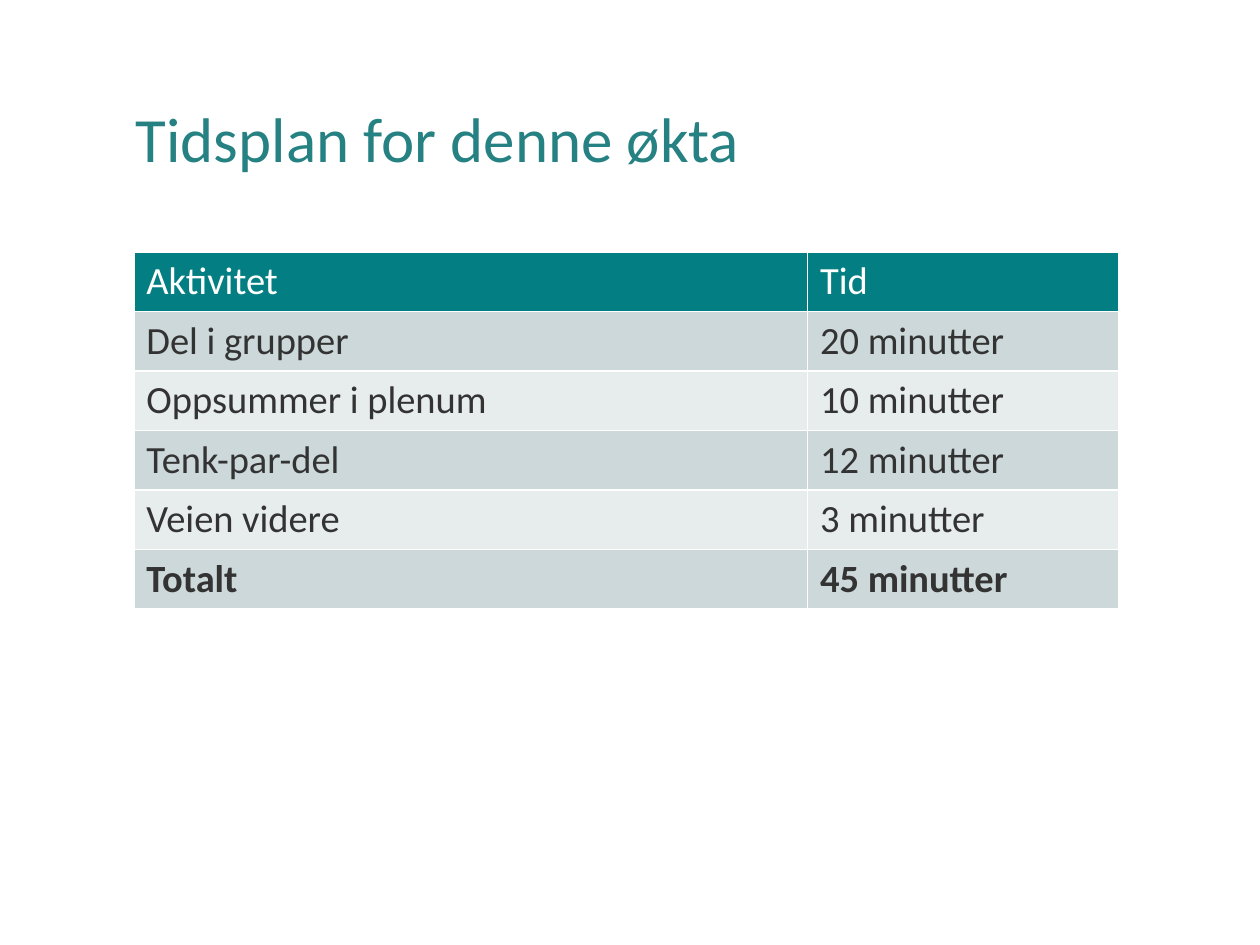
from pptx import Presentation
from pptx.dml.color import RGBColor
from pptx.enum.text import MSO_ANCHOR
from pptx.util import Pt

FONT = "Calibri"
TITLE_TEAL = RGBColor(0x26, 0x81, 0x83)
HEADER_TEAL = RGBColor(0x03, 0x7F, 0x83)
BAND_DARK = RGBColor(0xCC, 0xD8, 0xD9)
BAND_LIGHT = RGBColor(0xE7, 0xEC, 0xED)
TEXT_GREY = RGBColor(0x33, 0x33, 0x33)
WHITE = RGBColor(0xFF, 0xFF, 0xFF)

SCHEDULE = [
    ("Aktivitet", "Tid"),
    ("Del i grupper", "20 minutter"),
    ("Oppsummer i plenum", "10 minutter"),
    ("Tenk-par-del", "12 minutter"),
    ("Veien videre", "3 minutter"),
    ("Totalt", "45 minutter"),
]
COLUMN_WIDTHS = (Pt(385), Pt(178))
ROW_HEIGHT = Pt(34)


def set_font(para, size, color, bold=False):
    font = para.font
    font.name, font.size, font.bold = FONT, Pt(size), bold
    font.color.rgb = color


def add_title(page, text):
    box = page.shapes.add_textbox(Pt(70.5), Pt(29), Pt(597), Pt(104.4))
    frame = box.text_frame
    frame.word_wrap = True
    frame.vertical_anchor = MSO_ANCHOR.MIDDLE
    frame.margin_left = frame.margin_right = Pt(7.2)
    frame.margin_top = frame.margin_bottom = Pt(7.2)
    para = frame.paragraphs[0]
    para.text = text
    para.line_spacing = 0.9
    set_font(para, 36, TITLE_TEAL)


def row_fill(row):
    if row == 0:
        return HEADER_TEAL
    return BAND_DARK if row % 2 else BAND_LIGHT


def add_schedule(page):
    """Add the table; its default style supplies the white cell borders."""
    table = page.shapes.add_table(
        len(SCHEDULE), len(COLUMN_WIDTHS), Pt(76.5), Pt(144),
        sum(COLUMN_WIDTHS), ROW_HEIGHT * len(SCHEDULE)).table
    for column, width in zip(table.columns, COLUMN_WIDTHS):
        column.width = width
    last_row = len(SCHEDULE) - 1
    for row, texts in enumerate(SCHEDULE):
        table.rows[row].height = ROW_HEIGHT
        for column, text in enumerate(texts):
            cell = table.cell(row, column)
            cell.fill.solid()
            cell.fill.fore_color.rgb = row_fill(row)
            cell.text = text
            set_font(cell.text_frame.paragraphs[0], 22,
                     TEXT_GREY if row else WHITE, bold=row == last_row)


def main():
    deck = Presentation()
    deck.slide_width, deck.slide_height = Pt(720), Pt(540)
    page = deck.slides.add_slide(deck.slide_layouts[6])
    add_title(page, "Tidsplan for denne økta")
    add_schedule(page)
    deck.save("out.pptx")


if __name__ == "__main__":
    main()
